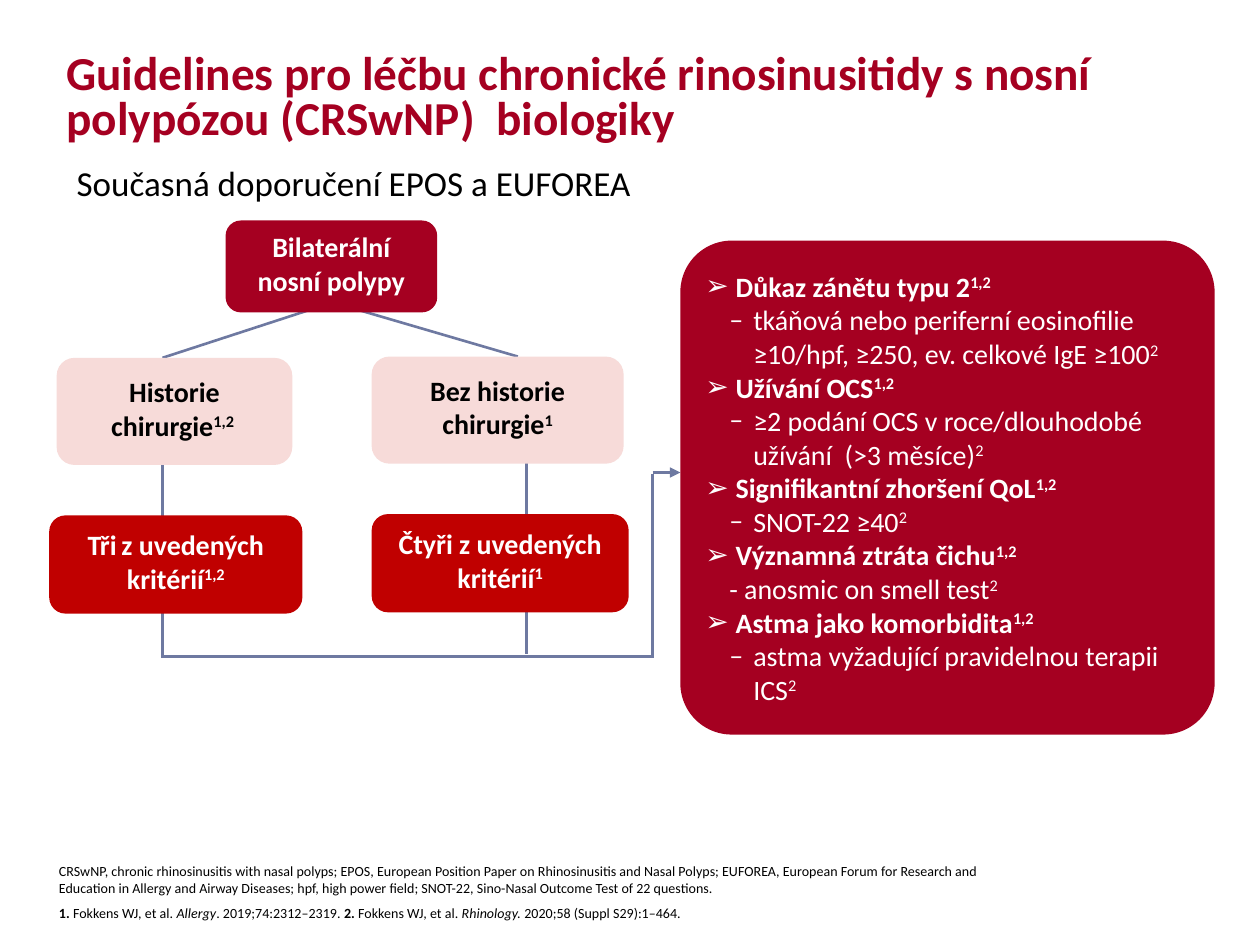
from lxml.etree import SubElement
from pptx import Presentation
from pptx.dml.color import RGBColor
from pptx.enum.shapes import MSO_CONNECTOR, MSO_SHAPE
from pptx.enum.text import MSO_ANCHOR, PP_ALIGN
from pptx.oxml.ns import qn
from pptx.util import Inches, Pt

CRIMSON = RGBColor(0xA5, 0x00, 0x21)
RED = RGBColor(0xC0, 0x00, 0x00)
PINK = RGBColor(0xF7, 0xDB, 0xD9)
SLATE = RGBColor(0x6E, 0x79, 0xA1)
BLACK = RGBColor(0x00, 0x00, 0x00)
WHITE = RGBColor(0xFF, 0xFF, 0xFF)

BOLD = {"bold": True}
ITALIC = {"italic": True}

NODES = [
    ((1.4, 0, 1.68, 0.73), CRIMSON, WHITE, [("Bilaterální nosní polypy", {})]),
    ((0.06, 1.09, 1.87, 0.85), PINK, BLACK, [("Historie chirurgie", {}), ("^1,2 ", {})]),
    ((0, 2.34, 2.01, 0.78), RED, WHITE,
     [("Tři", {}), (" ", {"size": Pt(12)}), ("z uvedených kritérií", {}), ("^1,2", {})]),
    ((2.56, 1.08, 2, 0.85), PINK, BLACK, [("Bez historie chirurgie", {}), ("^1", {})]),
    ((2.56, 2.33, 2.04, 0.78), RED, WHITE, [("Čtyři z uvedených kritérií", {}), ("^1", {})]),
]
LINKS = [
    ((3.79, 1.32), (3.79, 3.44)),
    ((0.9, 1.35), (0.9, 3.47)),
    ((2.25, 0.65), (0.9, 1.09)),
    ((2.25, 0.65), (3.72, 1.08)),
    ((4.79, 3.46), (0.9, 3.46)),
    ((4.79, 2.01), (4.79, 3.47)),
]
ARROW = ((4.79, 2), (5.01, 2))

CRITERIA = [
    (" Důkaz zánětu typu 2", "–", "tkáňová nebo periferní eosinofilie ≥10/hpf, ≥250, ev. celkové IgE ≥100"),
    (" Užívání OCS", "–", "≥2 podání OCS v roce/dlouhodobé užívání  (>3 měsíce)"),
    (" Signifikantní zhoršení QoL", "–", "SNOT-22 ≥40"),
    (" Významná ztráta čichu", None, "- anosmic on smell test"),
    (" Astma jako komorbidita", "–", "astma vyžadující pravidelnou terapii ICS"),
]

FOOTNOTES = [
    [("CRSwNP, chronic rhinosinusitis with nasal polyps; EPOS, European Position Paper on "
      "Rhinosinusitis and Nasal Polyps; EUFOREA, European Forum for Research and Education in "
      "Allergy and Airway Diseases; hpf, high power field; SNOT-22, Sino-Nasal Outcome Test of "
      "22 questions.", {})],
    [("1. ", BOLD), ("Fokkens WJ, et al. ", {}), ("Allergy", ITALIC),
     (". 2019;74:2312–2319. ", {}), ("2. ", BOLD), ("Fokkens WJ, et al. ", {}),
     ("Rhinology.", ITALIC), (" 2020;58 (Suppl S29):1–464.", {})],
]


def apply(target, values):
    for name, value in values.items():
        setattr(target, name, value)


def write(paragraph, runs, size, color, bold=False):
    for text, changes in runs:
        run = paragraph.add_run()
        run.text = text.removeprefix("^")
        apply(run.font, {"name": "Calibri", "size": Pt(size), "bold": bold, **changes})
        run.font.color.rgb = color
        if text.startswith("^"):
            run.font._element.set("baseline", "30000")


def add_text(slide, box, **frame_format):
    frame = slide.shapes.add_textbox(*map(Inches, box)).text_frame
    apply(frame, {"word_wrap": True, **frame_format})
    return frame


def add_rounded_box(slide, box, fill, top_margin):
    shape = slide.shapes.add_shape(MSO_SHAPE.ROUNDED_RECTANGLE, *map(Inches, box))
    shape.shadow.inherit = False
    shape.fill.solid()
    shape.fill.fore_color.rgb = fill
    shape.line.fill.background()
    apply(shape.text_frame, {
        "word_wrap": True, "vertical_anchor": MSO_ANCHOR.MIDDLE,
        "margin_left": Inches(0.08), "margin_right": Inches(0.08),
        "margin_top": Inches(top_margin), "margin_bottom": Inches(0.08),
    })
    return shape


def add_link(slide, origin, start, end):
    points = [Inches(base + offset) for point in (start, end) for base, offset in zip(origin, point)]
    link = slide.shapes.add_connector(MSO_CONNECTOR.STRAIGHT, *points)
    link.line.color.rgb = SLATE
    link.line.width = Pt(1.5)
    SubElement(link._element.spPr, qn("a:effectLst"))
    return link


def set_bullet(paragraph, indent, mark):
    properties = paragraph._p.get_or_add_pPr()
    properties.set("marL", str(Inches(indent)))
    properties.set("indent", str(Inches(-0.19)))
    if mark is None:
        SubElement(properties, qn("a:buNone"))
        return
    color = SubElement(properties, qn("a:buClr"))
    SubElement(color, qn("a:srgbClr"), val=str(WHITE))
    SubElement(properties, qn("a:buFont"), typeface="Calibri")
    SubElement(properties, qn("a:buChar"), char=mark)


def build_heading(slide, box):
    left, top, width, height = box
    title = add_text(slide, box, margin_top=Inches(0.07)).paragraphs[0]
    title.line_spacing = 0.8
    write(title, [("Guidelines pro léčbu chronické rinosinusitidy s nosní polypózou "
                   "(CRSwNP)  biologiky", {})], 27, CRIMSON, bold=True)
    subtitle = add_text(slide, (left + 0.08, top + 0.87, 8.29, 0.4)).paragraphs[0]
    write(subtitle, [("Současná doporučení EPOS a EUFOREA", {})], 20, BLACK)


def build_flowchart(slide, origin):
    for start, end in LINKS:
        add_link(slide, origin, start, end)
    arrow = add_link(slide, origin, *ARROW)
    SubElement(arrow.line._get_or_add_ln(), qn("a:tailEnd"), type="triangle")
    left, top = origin
    for (x, y, width, height), fill, color, runs in NODES:
        node = add_rounded_box(slide, (left + x, top + y, width, height), fill, 0.03)
        label = node.text_frame.paragraphs[0]
        label.alignment = PP_ALIGN.CENTER
        write(label, runs, 16, color, bold=True)


def build_criteria(slide, box):
    panel = add_rounded_box(slide, box, CRIMSON, 0.08)
    panel.adjustments[0] = 0.104
    frame = panel.text_frame
    for number, (criterion, mark, detail) in enumerate(CRITERIA):
        heading = frame.add_paragraph() if number else frame.paragraphs[0]
        explanation = frame.add_paragraph()
        explanation.level = 1
        for paragraph in (heading, explanation):
            paragraph.alignment = PP_ALIGN.LEFT
        set_bullet(heading, 0.19, "➢")
        set_bullet(explanation, 0.38, mark)
        write(heading, [(criterion, {}), ("^1,2", {})], 16, WHITE, bold=True)
        write(explanation, [(detail, {}), ("^2", {})], 16, WHITE)


def build_footnotes(slide, box):
    frame = add_text(slide, box, vertical_anchor=MSO_ANCHOR.BOTTOM)
    for number, runs in enumerate(FOOTNOTES):
        note = frame.add_paragraph() if number else frame.paragraphs[0]
        apply(note, {"space_before": Pt(1.6), "space_after": Pt(3)})
        write(note, runs, 8, BLACK)


def main():
    presentation = Presentation()
    apply(presentation, {"slide_width": Inches(10), "slide_height": Inches(7.5)})
    slide = presentation.slides.add_slide(presentation.slide_layouts[6])
    build_heading(slide, (0.43, 0.36, 9, 1.25))
    build_footnotes(slide, (0.37, 6.77, 7.6, 0.59))
    build_flowchart(slide, (0.39, 1.75))
    build_criteria(slide, (5.4, 1.91, 4.24, 3.92))
    presentation.save("out.pptx")


if __name__ == "__main__":
    main()
